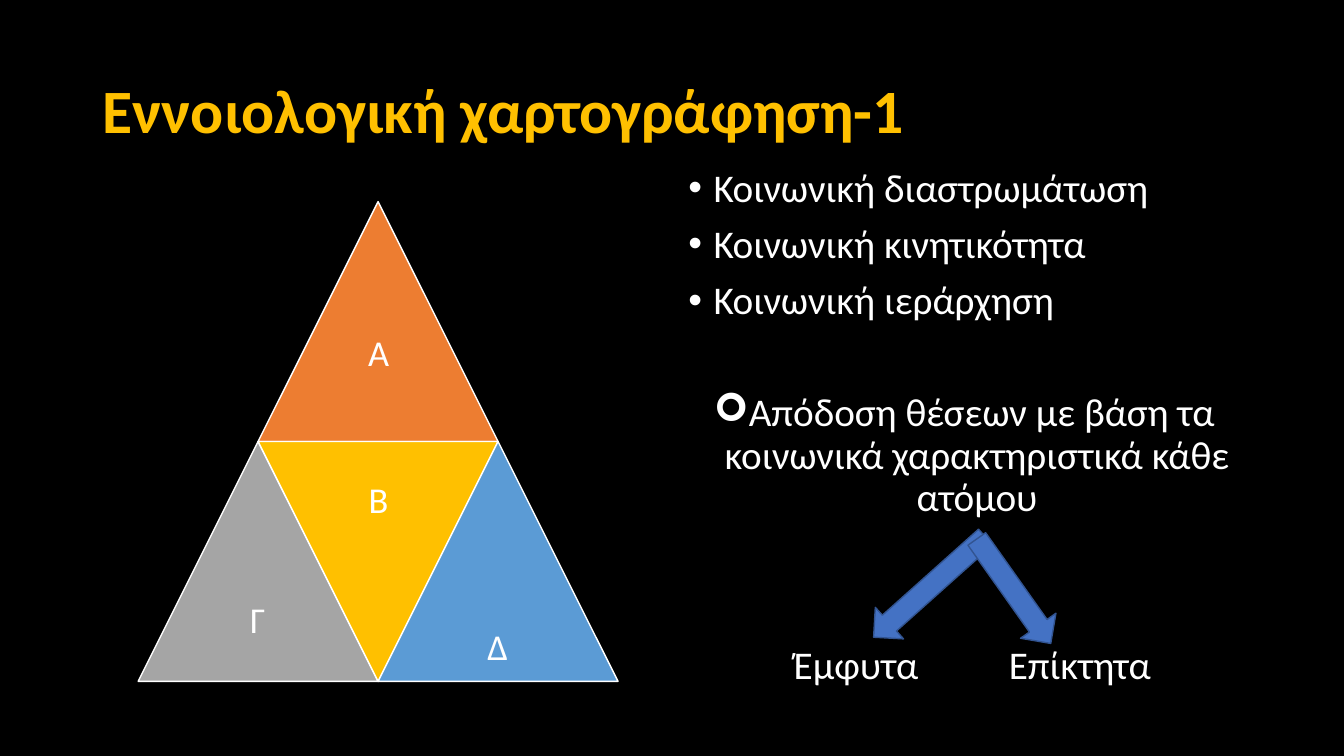
from dataclasses import dataclass
from lxml.etree import SubElement as Sub
from pptx import Presentation
from pptx.dml.color import RGBColor as Rgb
from pptx.enum.shapes import MSO_SHAPE as Shape
from pptx.enum.text import MSO_ANCHOR as Anchor, PP_ALIGN as Align
from pptx.oxml.ns import qn
from pptx.util import Pt

SCALE = 9144


@dataclass(frozen=True)
class Theme:
    font: str = "Calibri"
    back: str = "000000"
    text: str = "FFFFFF"
    gold: str = "FFC000"
    orange: str = "ED7D31"
    gray: str = "A5A5A5"
    sky: str = "5B9BD5"
    blue: str = "4472C4"
    navy: str = "325491"
    title: int = 44
    body: int = 28
    label: int = 26


THEME = Theme()


def emu(box):
    return [round(v) * SCALE for v in box]


def bullet(para, mark, face):
    props = para._p.get_or_add_pPr()
    props.set("marL", str(25 * SCALE))
    props.set("indent", str(-25 * SCALE))
    Sub(props, qn("a:buFont"), typeface=face)
    Sub(props, qn("a:buChar"), char=mark)


def write(shapes, box, text, size, color=THEME.text, bold=False,
          align=Align.LEFT, anchor=Anchor.TOP, mark=None, face="Arial"):
    frame = shapes.add_textbox(*emu(box)).text_frame
    frame.word_wrap = True
    frame.vertical_anchor = anchor
    frame.text = text
    for i, para in enumerate(frame.paragraphs):
        para.alignment = align
        para.line_spacing = 0.9
        para.space_before = Pt(10 if i else 0)
        if mark:
            bullet(para, mark, face)
        for run in para.runs:
            run.font.name = THEME.font
            run.font.size = Pt(size)
            run.font.bold = bold
            run.font.color.rgb = Rgb.from_string(color)


def draw(shapes, kind, box, fill, line, turn=0):
    item = shapes.add_shape(kind, *emu(box))
    item.shadow.inherit = False
    item.rotation = turn
    item.fill.solid()
    item.fill.fore_color.rgb = Rgb.from_string(fill)
    item.line.color.rgb = Rgb.from_string(line)
    item.line.width = Pt(1)


def title(slide, box):
    write(slide.shapes, box, "Εννοιολογική χαρτογράφηση-1", THEME.title,
          THEME.gold, bold=True, anchor=Anchor.MIDDLE)


def pyramid(slide, box):
    left, top, width, height = box
    wide, high = width / 2, height / 2
    group = slide.shapes.add_group_shape().shapes
    parts = [
        ("Α", 0.5, 0, THEME.orange, 0, -27),
        ("Γ", 0, 1, THEME.gray, 0, 0),
        ("Β", 0.5, 1, THEME.gold, 180, 0),
        ("Δ", 1, 1, THEME.sky, 0, 27),
    ]
    for name, col, row, fill, turn, shift in parts:
        x, y = left + col * wide, top + row * high
        draw(group, Shape.ISOSCELES_TRIANGLE, (x, y, wide, high),
             fill, THEME.text, turn)
        drop = 0 if turn else high / 2
        write(group, (x + wide / 4, y + drop + shift, wide / 2, high / 2),
              name, THEME.label, align=Align.CENTER, anchor=Anchor.MIDDLE)


def points(slide, box):
    left, top, width, height = box
    shapes = slide.shapes
    terms = ("Κοινωνική διαστρωμάτωση", "Κοινωνική κινητικότητα",
             "Κοινωνική ιεράρχηση")
    write(shapes, (left, top, width, 170), "\n".join(terms), THEME.body, mark="•")
    write(shapes, (left, top + 223, width, 138),
          "Απόδοση θέσεων με βάση τα κοινωνικά χαρακτηριστικά κάθε ατόμου",
          THEME.body, align=Align.CENTER, mark="➢", face="Wingdings")
    for name, x in (("Έμφυτα", 76), ("Επίκτητα", 298)):
        write(shapes, (left + x, top + 474, 200, 53), name, THEME.body,
              align=Align.CENTER)
    for x, y, wide, high, turn in ((228, 346, 42, 149, 48.2),
                                   (311, 361, 43, 127, 324.7)):
        draw(shapes, Shape.DOWN_ARROW, (left + x, top + y, wide, high),
             THEME.blue, THEME.navy, turn)


def main():
    deck = Presentation()
    deck.slide_width, deck.slide_height = emu((1333, 750))
    slide = deck.slides.add_slide(deck.slide_layouts[6])
    slide.background.fill.solid()
    slide.background.fill.fore_color.rgb = Rgb.from_string(THEME.back)
    title(slide, (92, 40, 1150, 145))
    pyramid(slide, (137, 200, 476, 476))
    points(slide, (673, 162, 567, 573))
    deck.save("out.pptx")


if __name__ == "__main__":
    main()
